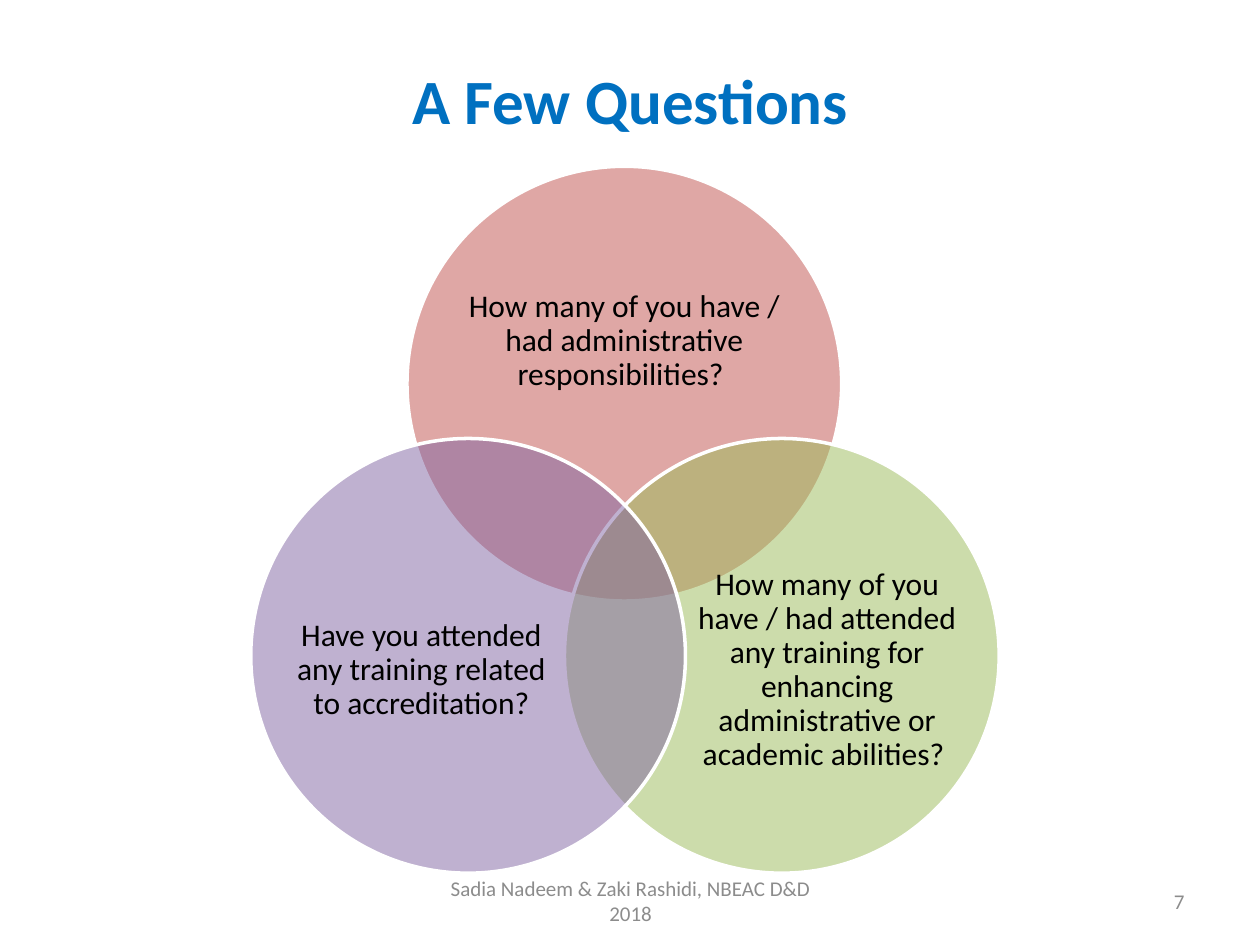
from lxml import etree
from pptx import Presentation
from pptx.dml.color import RGBColor
from pptx.enum import shapes, text
from pptx.oxml.ns import qn
from pptx.util import Inches, Pt

BLUE = RGBColor(0x00, 0x70, 0xC0)
BLACK = RGBColor(0x00, 0x00, 0x00)
WHITE = RGBColor(0xFF, 0xFF, 0xFF)
GRAY = RGBColor(0x8C, 0x8C, 0x8C)
RED = RGBColor(0xC0, 0x50, 0x4D)
GREEN = RGBColor(0x9B, 0xBB, 0x59)
PURPLE = RGBColor(0x80, 0x64, 0xA2)

FONT = "Calibri"
DIAMETER = 3.45
LOWER_TOP = 3.48
LABEL_TOP, LABEL_WIDTH, LABEL_HEIGHT = 4.37, 2.07, 1.9

# Circle position, colour, label area and question, from back to front
QUESTIONS = [
    ((3.23, 1.32), RED, (3.69, 1.93, 2.53, 1.55),
     "How many of you have / had administrative responsibilities? "),
    ((4.48, LOWER_TOP), GREEN, (5.53, LABEL_TOP, LABEL_WIDTH, LABEL_HEIGHT),
     "How many of you have / had attended any training for enhancing "
     "administrative or academic abilities? "),
    ((1.99, LOWER_TOP), PURPLE, (2.31, LABEL_TOP, LABEL_WIDTH, LABEL_HEIGHT),
     "Have you attended any training related to accreditation?"),
]


def add_text(page, area, words, size, color, align=text.PP_ALIGN.CENTER, bold=False):
    box = page.shapes.add_textbox(*map(Inches, area))
    frame = box.text_frame
    frame.word_wrap = True
    frame.vertical_anchor = text.MSO_ANCHOR.MIDDLE
    para = frame.paragraphs[0]
    para.text = words
    para.alignment = align
    para.font.name = FONT
    para.font.size = Pt(size)
    para.font.bold = bold
    para.font.color.rgb = color
    return frame


def add_circle(page, position, color):
    """Add a half-transparent circle with a white outline."""
    left, top = map(Inches, position)
    circle = page.shapes.add_shape(
        shapes.MSO_SHAPE.OVAL, left, top, Inches(DIAMETER), Inches(DIAMETER))
    circle.shadow.inherit = False
    circle.fill.solid()
    circle.fill.fore_color.rgb = color
    fill_color = circle._element.spPr.find(qn("a:solidFill")).find(qn("a:srgbClr"))
    etree.SubElement(fill_color, qn("a:alpha")).set("val", "50000")
    circle.line.color.rgb = WHITE
    circle.line.width = Pt(2)


def add_label(page, area, question):
    frame = add_text(page, area, question, 18, BLACK)
    frame.margin_left = frame.margin_right = 0
    frame.margin_top = frame.margin_bottom = 0
    frame.paragraphs[0].line_spacing = 0.9


def main():
    deck = Presentation()
    deck.slide_width, deck.slide_height = Inches(10), Inches(7.5)
    page = deck.slides.add_slide(deck.slide_layouts[6])

    add_text(page, (0.69, 0.4, 8.62, 0.77), "A Few Questions", 36, BLUE, bold=True)
    for position, color, area, question in QUESTIONS:
        add_circle(page, position, color)
        add_label(page, area, question)
    add_text(page, (7.17, 6.95, 2.33, 0.4), "7", 12, GRAY, text.PP_ALIGN.RIGHT)
    add_text(page, (3.42, 6.95, 3.17, 0.4),
             "Sadia Nadeem & Zaki Rashidi, NBEAC D&D 2018", 12, GRAY)

    deck.save("out.pptx")


if __name__ == "__main__":
    main()
